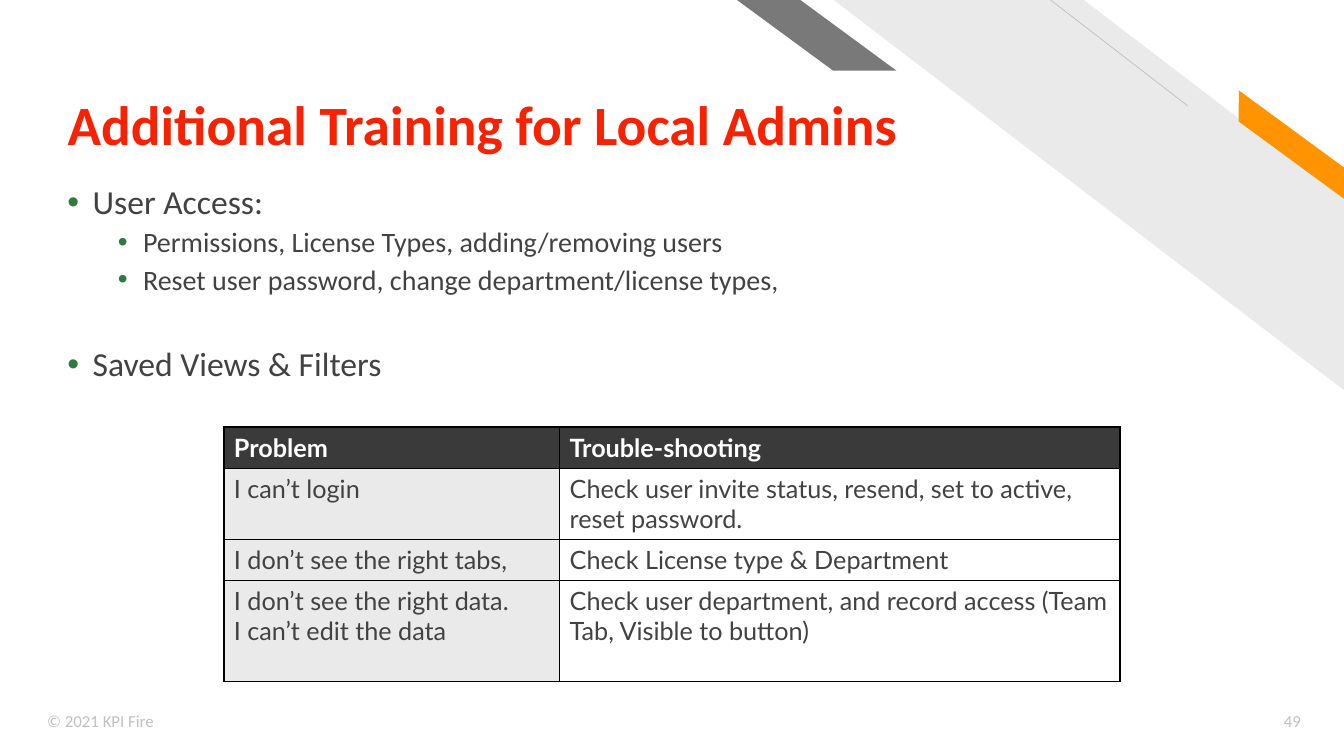
from lxml.etree import SubElement
from pptx import Presentation
from pptx.dml.color import RGBColor
from pptx.enum.shapes import MSO_CONNECTOR, MSO_SHAPE
from pptx.enum.text import MSO_ANCHOR, MSO_AUTO_SIZE, PP_ALIGN
from pptx.oxml.ns import qn
from pptx.util import Inches, Pt

COLORS = {
    "title": "F62202", "text": "424242", "bullet": "2E7A40", "footer": "C0C0C0",
    "band": "EAEAEA", "hairline": "BFBFBF", "orange": "FF9300", "gray": "797979",
    "header": "3A3A3A", "white": "FFFFFF", "border": "000000",
}
TOPICS = [  # level, text, space before in points
    (0, "User Access:", 0),
    (1, "Permissions, License Types, adding/removing users", 5),
    (1, "Reset user password, change department/license types,", 5),
    (0, "Saved Views & Filters", 37),
]
TOPIC_SIZES = (24, 20)
PROBLEMS = [
    ("Problem", "Trouble-shooting"),
    ("I can’t login", "Check user invite status, resend, set to active, reset password."),
    ("I don’t see the right tabs,", "Check License type & Department"),
    ("I don’t see the right data.\nI can’t edit the data",
     "Check user department, and record access (Team Tab, Visible to button)"),
]
COLUMN_WIDTHS = (3.33, 5.56)
ROW_HEIGHTS = (0.41, 0.7, 0.41, 1)


def rgb(name):
    return RGBColor.from_string(COLORS[name])


def box(*lengths):
    return [Inches(length) for length in lengths]


def add_text(paragraph, text, size, color, font="Calibri", bold=False):
    """Add one run per line of text, with line breaks between them."""
    for number, line in enumerate(text.split("\n")):
        if number:
            paragraph.add_line_break()
        run = paragraph.add_run()
        run.text = line
        run.font.name, run.font.size, run.font.bold = font, Pt(size), bold
        run.font.color.rgb = rgb(color)


def add_stripe(slide, preset, place, adjustment, color, rotation=0):
    """Add a decorative shape that is mirrored left to right."""
    stripe = slide.shapes.add_shape(preset, *box(*place))
    stripe.adjustments[0] = adjustment
    stripe.rotation = rotation
    stripe.element.spPr.find(qn("a:xfrm")).set("flipH", "1")
    stripe.shadow.inherit = False
    stripe.fill.solid()
    stripe.fill.fore_color.rgb = rgb(color)
    stripe.line.fill.background()


def add_hairline(slide, start, end):
    hairline = slide.shapes.add_connector(MSO_CONNECTOR.STRAIGHT, *box(*start, *end))
    hairline.line.color.rgb = rgb("hairline")
    hairline.line.width = Pt(0.5)
    SubElement(hairline.element.spPr, qn("a:effectLst"))


def add_title(slide, text):
    title = slide.shapes.title
    title.left, title.top, title.width, title.height = box(0.57, 0.23, 9.11, 1.33)
    frame = title.text_frame
    frame.auto_size = MSO_AUTO_SIZE.NONE
    frame.word_wrap = True
    frame.vertical_anchor = MSO_ANCHOR.BOTTOM
    frame.margin_bottom = 0
    paragraph = frame.paragraphs[0]
    paragraph.alignment = PP_ALIGN.LEFT
    paragraph.line_spacing = 0.9
    add_text(paragraph, text, 39.6, "title", bold=True)


def add_footer(slide, text, left, width, alignment):
    frame = slide.shapes.add_textbox(*box(left, 6.95, width, 0.4)).text_frame
    frame.word_wrap = True
    frame.vertical_anchor = MSO_ANCHOR.MIDDLE
    frame.paragraphs[0].alignment = alignment
    add_text(frame.paragraphs[0], text, 12, "footer")


def add_bullet(paragraph, level):
    properties = paragraph._p.get_or_add_pPr()
    properties.set("marL", str(Inches(0.25 + 0.5 * level)))
    properties.set("indent", str(Inches(-0.25)))
    bullet_color = SubElement(properties, qn("a:buClr"))
    SubElement(bullet_color, qn("a:srgbClr"), val=COLORS["bullet"])
    SubElement(properties, qn("a:buFont"), typeface="Arial")
    SubElement(properties, qn("a:buChar"), char="•")


def add_topics(slide):
    frame = slide.shapes.add_textbox(*box(0.57, 1.79, 11.68, 2.3)).text_frame
    frame.word_wrap = True
    for number, (level, text, space) in enumerate(TOPICS):
        paragraph = frame.add_paragraph() if number else frame.paragraphs[0]
        paragraph.level = level
        paragraph.line_spacing = 0.9
        paragraph.space_before = Pt(space)
        add_bullet(paragraph, level)
        add_text(paragraph, text, TOPIC_SIZES[level], "text")


def add_borders(cell, widths):
    """Draw the cell's borders; widths maps a side (L, R, T, B) to points."""
    properties = cell._tc.get_or_add_tcPr()
    for side, width in widths.items():
        border = SubElement(properties, qn(f"a:ln{side}"), w=str(Pt(width)))
        fill = SubElement(border, qn("a:solidFill"))
        SubElement(fill, qn("a:srgbClr"), val=COLORS["border"])


def add_problem_table(slide):
    size = len(PROBLEMS), len(COLUMN_WIDTHS)
    place = box(2.22, 4.24, sum(COLUMN_WIDTHS), sum(ROW_HEIGHTS))
    table = slide.shapes.add_table(*size, *place).table
    table.horz_banding = False
    for column, width in zip(table.columns, COLUMN_WIDTHS):
        column.width = Inches(width)
    for r, texts in enumerate(PROBLEMS):
        table.rows[r].height = Inches(ROW_HEIGHTS[r])
        for c, text in enumerate(texts):
            cell = table.cell(r, c)
            is_header = r == 0
            add_borders(cell, {"L": 1 if c else 1.5, "R": 1.5 if c else 1,
                               "T": 1.5 if is_header else 1, "B": 1})
            if is_header or c == 0:
                cell.fill.solid()
                cell.fill.fore_color.rgb = rgb("header" if is_header else "band")
            else:
                cell.fill.background()
            add_text(cell.text_frame.paragraphs[0], text, 18,
                     "white" if is_header else "text", "Lato", is_header)


def main():
    deck = Presentation()
    deck.slide_width, deck.slide_height = box(13.33, 7.5)
    slide = deck.slides.add_slide(deck.slide_layouts[5])
    add_stripe(slide, MSO_SHAPE.DIAGONAL_STRIPE, (8.27, 0, 5.06, 3.87), 0.51, "band")
    add_hairline(slide, (11.78, 1.05), (10.42, 0))
    add_stripe(slide, MSO_SHAPE.PARALLELOGRAM, (12.07, 1.31, 1.48, 0.25), 0.72, "orange", 36.3)
    add_stripe(slide, MSO_SHAPE.PARALLELOGRAM, (7.31, 0, 1.58, 0.7), 1.36, "gray")
    add_title(slide, "Additional Training for Local Admins")
    add_footer(slide, "© 2021 KPI Fire", 0.37, 4.5, PP_ALIGN.LEFT)
    add_footer(slide, "49", 12.19, 0.81, PP_ALIGN.RIGHT)
    add_topics(slide)
    add_problem_table(slide)
    deck.save("out.pptx")


if __name__ == "__main__":
    main()
